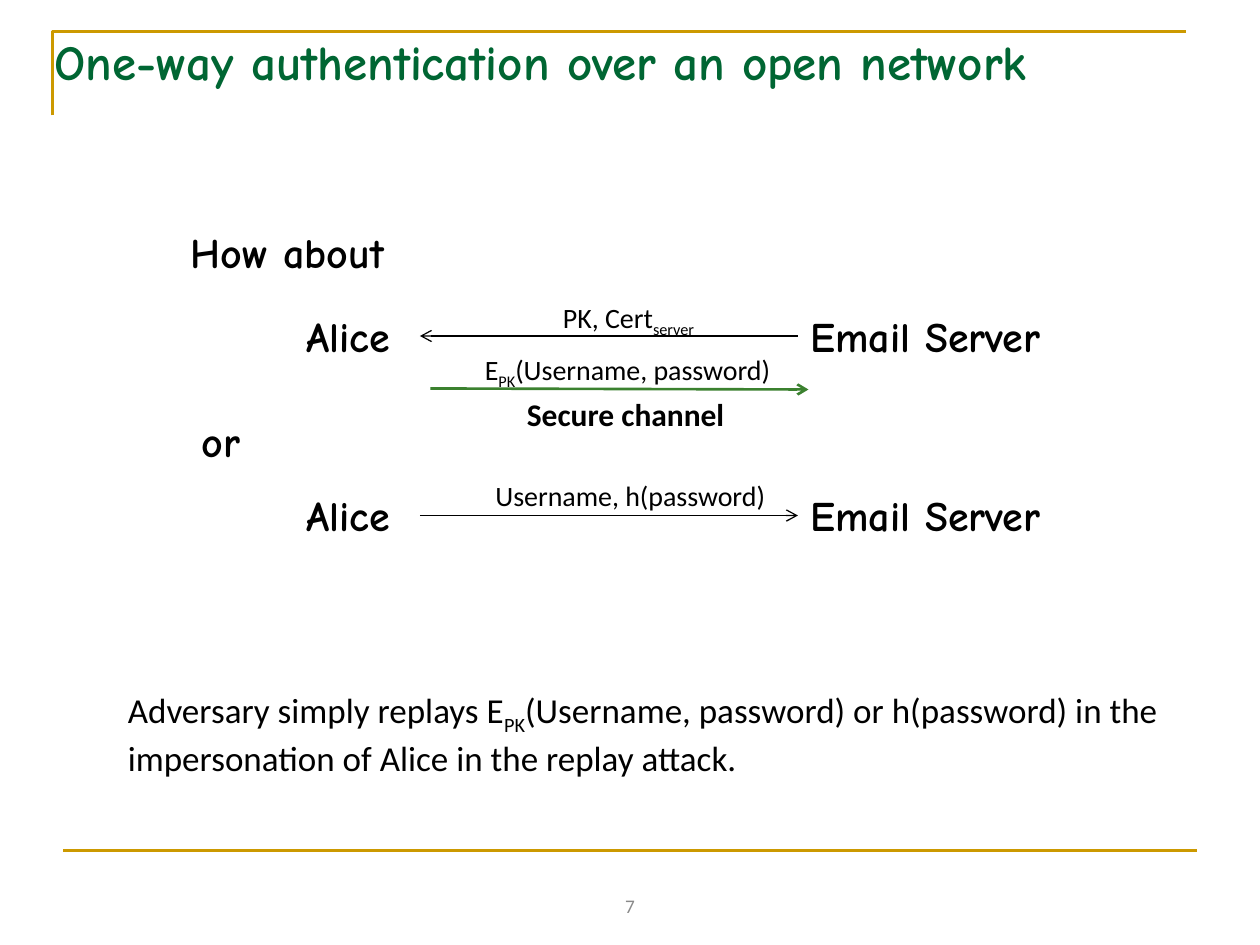
from lxml.etree import SubElement
from pptx import Presentation
from pptx.dml.color import RGBColor
from pptx.enum.shapes import MSO_CONNECTOR as Connector
from pptx.enum.text import MSO_ANCHOR as Anchor, MSO_AUTO_SIZE as AutoSize, PP_ALIGN as Align
from pptx.oxml.ns import qn
from pptx.util import Pt

EMU_PER_PX = 7620  # 120 px to the inch
COLORS = {"gold": "CC9900", "title": "006633", "text": "000000",
          "secure": "3B812F", "number": "898989"}
HAND, BODY = "Comic Neue", "Calibri"


def px(n):
    return n * EMU_PER_PX


def rgb(name):
    return RGBColor.from_string(COLORS[name])


class Deck:
    def __init__(self, width, height):
        self.prs = Presentation()
        self.prs.slide_width, self.prs.slide_height = px(width), px(height)
        self.s = self.prs.slides.add_slide(self.prs.slide_layouts[6])

    def text(self, box, runs, size, font=BODY, color="text", bold=False,
             align=Align.LEFT, anchor=Anchor.TOP, wrap=False):
        """Add one paragraph; every second run is a subscript."""
        tf = self.s.shapes.add_textbox(*map(px, box)).text_frame
        tf.word_wrap = wrap
        tf.auto_size = AutoSize.NONE if wrap else AutoSize.SHAPE_TO_FIT_TEXT
        tf.vertical_anchor = anchor
        p = tf.paragraphs[0]
        p.alignment = align
        for i, part in enumerate(runs):
            r = p.add_run()
            r.text = part
            r.font.name, r.font.size, r.font.bold = font, Pt(size), bold
            r.font.color.rgb = rgb(color)
            if i % 2:
                r.font._element.set("baseline", "-25000")

    def hand(self, box, words):
        self.text(box, [words], 24, HAND, bold=True)

    def line(self, start, end, color="text", weight=0.75, arrow=False):
        c = self.s.shapes.add_connector(Connector.STRAIGHT, *map(px, start + end))
        c.line.color.rgb, c.line.width = rgb(color), Pt(weight)
        if arrow:
            SubElement(c.line._get_or_add_ln(), qn("a:tailEnd"), type="arrow")
        SubElement(c._element.spPr, qn("a:effectLst"))

    def outline(self, points, color, weight):
        """Draw an open, unfilled path."""
        fb = self.s.shapes.build_freeform(*points[0], scale=EMU_PER_PX)
        fb.add_line_segments(points[1:], close=False)
        sp = fb.convert_to_shape()
        sp.shadow.inherit = False
        sp.fill.background()
        sp.line.color.rgb, sp.line.width = rgb(color), Pt(weight)


def main():
    d = Deck(1200, 900)
    d.outline([(50, 110), (50, 30), (1130, 30)], "gold", 1.5)
    d.line((60, 810), (1140, 810), "gold", 1.5)
    d.text((40, 24, 1117, 101), ["One-way authentication over an open network"],
           28, HAND, "title", bold=True, wrap=True)

    d.hand((170, 210, 229, 61), "How about")
    d.hand((180, 390, 65, 61), "or")
    for top in (290, 460):
        d.hand((280, top, 120, 61), "Alice")
        d.hand((760, top, 275, 61), "Email Server")

    d.text((520, 280, 157, 44), ["PK, Cert", "server"], 16, align=Align.CENTER)
    d.line((760, 320), (400, 320), arrow=True)
    d.line((410, 370), (770, 371), "secure", 1.5, arrow=True)
    d.text((450, 330, 312, 44), ["E", "PK", "(Username, password)"], 16)
    d.text((490, 370, 214, 48), ["Secure channel"], 18, bold=True)
    d.line((400, 491), (760, 491), arrow=True)
    d.text((460, 450, 284, 44), ["Username, h(password)"], 16)

    d.text((110, 650, 1010, 92),
           ["Adversary simply replays E", "PK",
            "(Username, password) or h(password) in the impersonation of Alice"
            " in the replay attack."], 20, wrap=True)
    d.text((410, 820, 380, 60), ["7"], 11, color="number",
           align=Align.CENTER, anchor=Anchor.BOTTOM, wrap=True)
    d.prs.save("out.pptx")


if __name__ == "__main__":
    main()
